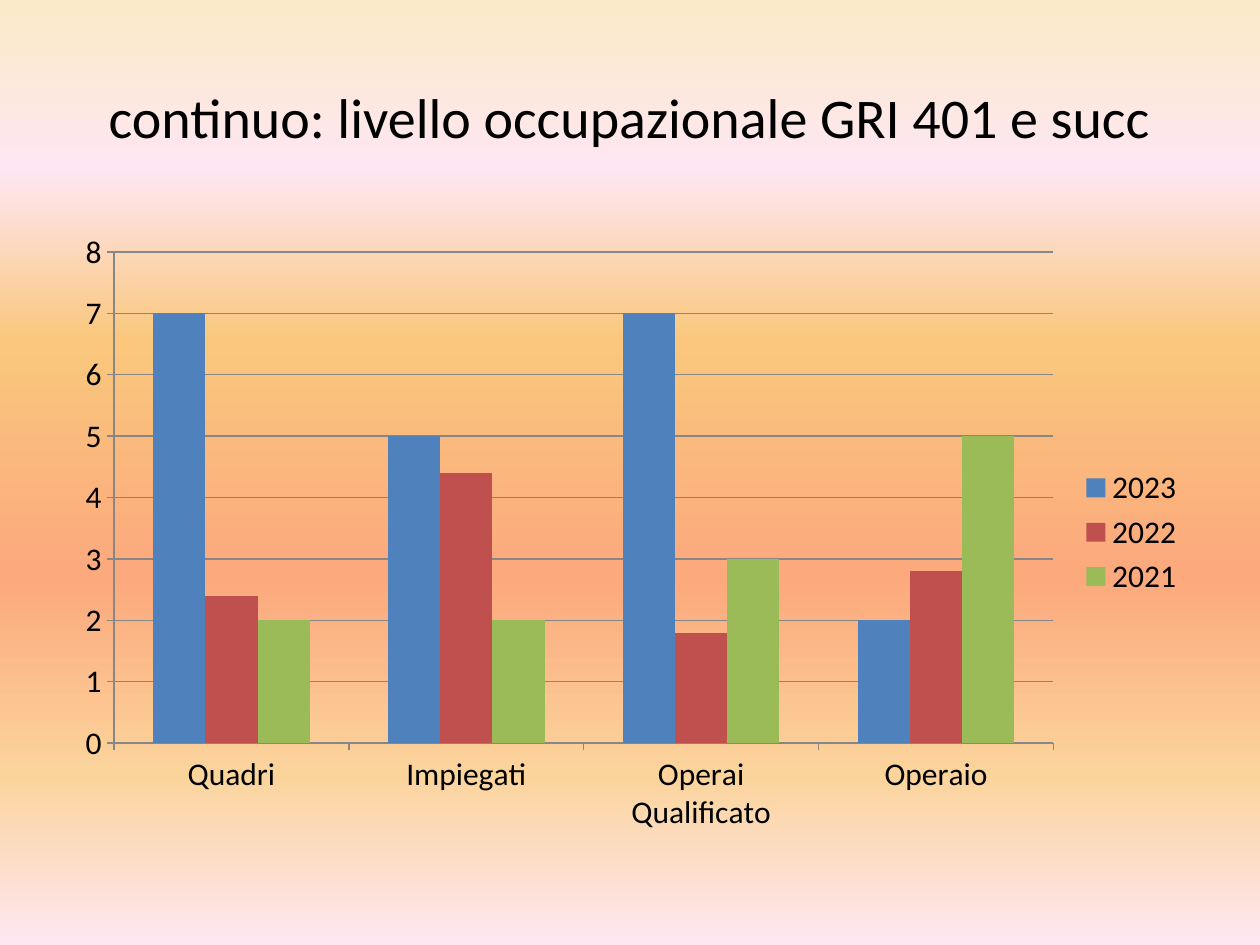
from lxml.etree import SubElement
from pptx import Presentation
from pptx.chart.data import CategoryChartData
from pptx.dml.color import RGBColor
from pptx.enum.chart import XL_CHART_TYPE as ChartType, XL_LEGEND_POSITION as LegendPosition
from pptx.enum.chart import XL_TICK_MARK as TickMark
from pptx.enum.text import MSO_ANCHOR as Anchor, PP_ALIGN as Align
from pptx.oxml.ns import qn
from pptx.util import Pt

FONT = "Calibri"
COLORS = {"text": "000000", "axis": "878787",
          "2023": "4F81BD", "2022": "C0504D", "2021": "9BBB59"}
SUNSET = {0: "FBEAC7", 18: "FEE7F2", 36: "FAC77D",
          61: "FBA97D", 82: "FBD49C", 100: "FEE7F2"}
CATEGORIES = ["Quadri", "Impiegati", "Operai Qualificato", "Operaio"]
EMPLOYEES = {"2023": (7, 5, 7, 2),
             "2022": (2.4, 4.4, 1.8, 2.8),
             "2021": (2, 2, 3, 5)}


def rgb(name):
    return RGBColor.from_string(COLORS[name])


def style_font(font, size):
    font.name = FONT
    font.size = Pt(size)
    font.color.rgb = rgb("text")


def paint_background(slide):
    fill = slide.background.fill
    fill.gradient()
    fill.gradient_angle = 270
    stops = slide.element.xpath("./p:cSld/p:bg//a:gsLst")[0]
    for stop in list(stops):
        stops.remove(stop)
    for percent, color in SUNSET.items():
        stop = SubElement(stops, qn("a:gs"), pos=str(percent * 1000))
        SubElement(stop, qn("a:srgbClr"), val=color)


def place_title(slide, text):
    title = slide.shapes.title
    title.left, title.top, title.width, title.height = Pt(36), Pt(21.6), Pt(648), Pt(90)
    title.text_frame.text = text
    title.text_frame.vertical_anchor = Anchor.MIDDLE
    heading = title.text_frame.paragraphs[0]
    heading.alignment = Align.CENTER
    style_font(heading.font, 32)


def style_line(line):
    line.color.rgb = rgb("axis")
    line.width = Pt(0.75)


def add_employment_chart(slide):
    data = CategoryChartData()
    data.categories = CATEGORIES
    for year, counts in EMPLOYEES.items():
        data.add_series(year, counts)
    chart = slide.shapes.add_chart(ChartType.COLUMN_CLUSTERED, Pt(36), Pt(126),
                                   Pt(648), Pt(356.4), data).chart
    style_font(chart.font, 18)
    chart.has_title = False
    chart.has_legend = True
    chart.legend.position = LegendPosition.RIGHT
    chart.legend.include_in_layout = False

    columns = chart.plots[0]
    columns.vary_by_categories = False
    columns.gap_width = 150
    columns.overlap = 0
    for year in columns.series:
        year.format.fill.solid()
        year.format.fill.fore_color.rgb = rgb(year.name)

    for axis in (chart.category_axis, chart.value_axis):
        axis.major_tick_mark = TickMark.OUTSIDE
        style_line(axis.format.line)
    chart.value_axis.minimum_scale = 0
    chart.value_axis.maximum_scale = 8
    chart.value_axis.major_unit = 1
    chart.value_axis.has_major_gridlines = True
    style_line(chart.value_axis.major_gridlines.format.line)


def main():
    """Build the slide on employment levels by job category and year."""
    deck = Presentation()
    deck.slide_width, deck.slide_height = Pt(720), Pt(540)
    slide = deck.slides.add_slide(deck.slide_layouts[5])
    paint_background(slide)
    place_title(slide, "continuo: livello occupazionale GRI 401 e succ")
    add_employment_chart(slide)
    deck.save("out.pptx")


if __name__ == "__main__":
    main()
